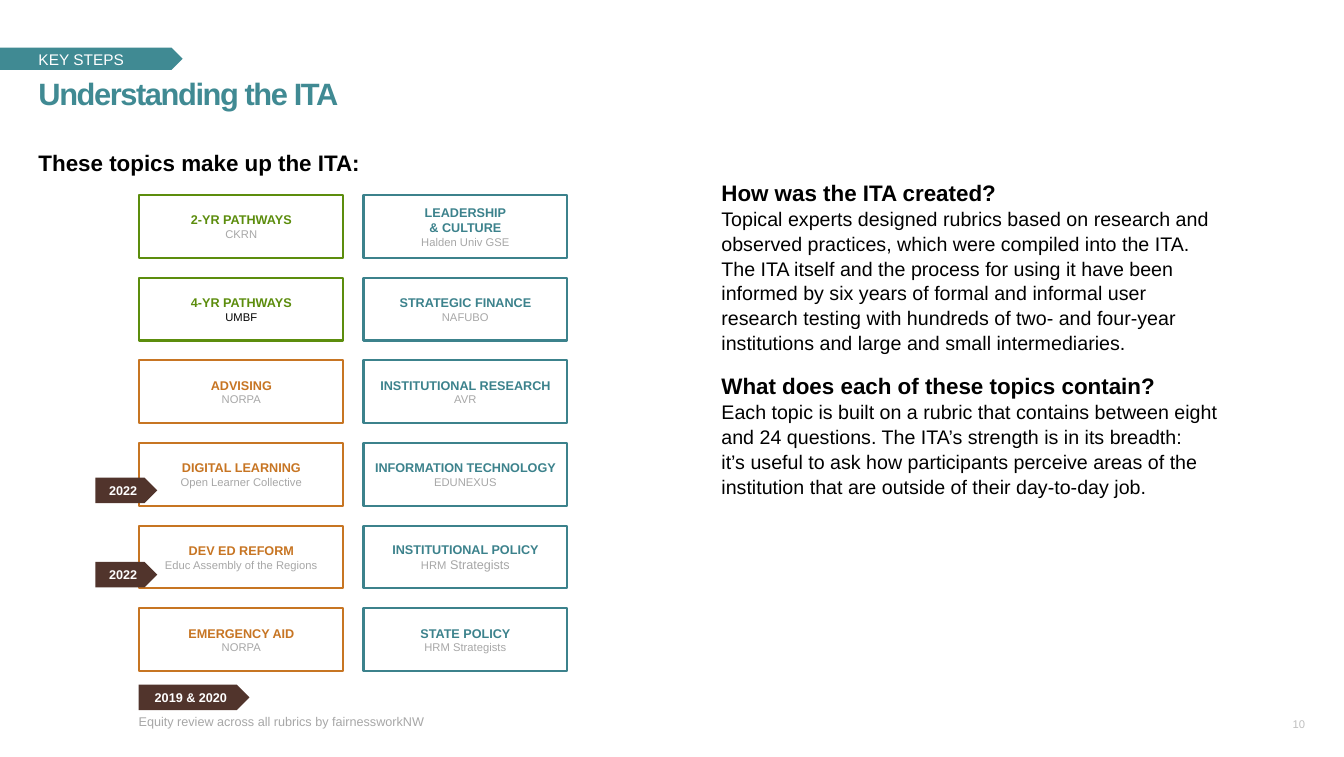
from dataclasses import dataclass

from pptx import Presentation
from pptx.dml.color import RGBColor
from pptx.enum.shapes import MSO_SHAPE
from pptx.enum.text import MSO_ANCHOR, PP_ALIGN
from pptx.util import Cm, Pt

RECTANGLE, PENTAGON = MSO_SHAPE.RECTANGLE, MSO_SHAPE.PENTAGON
LEFT, CENTER, RIGHT = PP_ALIGN.LEFT, PP_ALIGN.CENTER, PP_ALIGN.RIGHT
TOP, MIDDLE, BOTTOM = MSO_ANCHOR.TOP, MSO_ANCHOR.MIDDLE, MSO_ANCHOR.BOTTOM


@dataclass(frozen=True)
class Theme:
    font: str = "Arial"
    teal: str = "408A93"
    operations: str = "3C828C"
    pathways: str = "5C8D0D"
    support: str = "C77523"
    brown: str = "51342C"
    black: str = "000000"
    white: str = "FFFFFF"
    gray: str = "A7A7A7"
    pale: str = "BFBFBF"
    title: int = 22
    heading: int = 16
    body: int = 14
    kicker: int = 11
    label: int = 9
    small: int = 8


@dataclass
class Line:
    text: str
    size: int
    color: str
    bold: bool = False
    after: int = 0


class SlideBuilder:
    def __init__(self, slide, theme):
        self.shapes = slide.shapes
        self.theme = theme

    def style(self, run, size, color, bold=False):
        run.font.name = self.theme.font
        run.font.size = Pt(size)
        run.font.bold = bold
        run.font.color.rgb = RGBColor.from_string(color)

    def set_lines(self, frame, lines, align, anchor, spacing=1.0, inset=True):
        frame.word_wrap = True
        frame.vertical_anchor = anchor
        if not inset:
            frame.margin_left = frame.margin_right = 0
            frame.margin_top = frame.margin_bottom = 0
        for index, line in enumerate(lines):
            paragraph = frame.add_paragraph() if index else frame.paragraphs[0]
            paragraph.text = line.text
            paragraph.alignment = align
            paragraph.line_spacing = spacing
            paragraph.space_after = Pt(line.after)
            for run in paragraph.runs:
                self.style(run, line.size, line.color, line.bold)

    def text(self, left, top, width, height, lines, align=LEFT, anchor=TOP, spacing=1.05):
        frame = self.shapes.add_textbox(Cm(left), Cm(top), Cm(width), Cm(height)).text_frame
        self.set_lines(frame, lines, align, anchor, spacing, inset=False)
        return frame

    def shape(self, kind, left, top, width, height, fill, outline=None):
        shape = self.shapes.add_shape(kind, Cm(left), Cm(top), Cm(width), Cm(height))
        shape.shadow.inherit = False
        shape.fill.solid()
        shape.fill.fore_color.rgb = RGBColor.from_string(fill)
        if outline:
            shape.line.color.rgb = RGBColor.from_string(outline)
            shape.line.width = Pt(1.5)
        else:
            shape.line.fill.background()
        return shape

    def topic(self, left, top, color, names, partner, partner_color):
        card = self.shape(RECTANGLE, left, top, 5.13, 1.58, self.theme.white, color)
        lines = [Line(name, self.theme.label, color, True) for name in names]
        lines.append(Line(partner, self.theme.small, partner_color))
        self.set_lines(card.text_frame, lines, CENTER, MIDDLE, inset=False)
        return card.text_frame

    def year_tag(self, left, top, width, years):
        tag = self.shape(PENTAGON, left, top, width, 0.64, self.theme.brown)
        line = Line(years, self.theme.label, self.theme.white, True)
        self.set_lines(tag.text_frame, [line], CENTER, MIDDLE)


def main():
    theme = Theme()
    presentation = Presentation()
    presentation.slide_width, presentation.slide_height = Cm(33.83), Cm(19.05)
    slide = presentation.slides.add_slide(presentation.slide_layouts[6])
    builder = SlideBuilder(slide, theme)

    # Header
    builder.shape(PENTAGON, 0, 1.2, 4.6, 0.56, theme.teal)
    builder.text(0.97, 1.17, 14.66, 0.56,
                 [Line("KEY STEPS", theme.kicker, theme.white)], anchor=BOTTOM)
    title = builder.text(0.97, 1.83, 31.88, 0.8,
                         [Line("Understanding the ITA", theme.title, theme.teal, True)])
    title.paragraphs[0].runs[0]._r.get_or_add_rPr().set("spc", "-100")

    # Topic grid
    builder.text(0.97, 3.73, 14.66, 0.6,
                 [Line("These topics make up the ITA:", theme.heading, theme.black, True)])
    topic_columns = [
        [
            (theme.pathways, ["2-YR PATHWAYS"], "CKRN", theme.gray),
            (theme.pathways, ["4-YR PATHWAYS"], "UMBF", theme.black),
            (theme.support, ["ADVISING"], "NORPA", theme.gray),
            (theme.support, ["DIGITAL LEARNING"], "Open Learner Collective", theme.gray),
            (theme.support, ["DEV ED REFORM"], "Educ Assembly of the Regions", theme.gray),
            (theme.support, ["EMERGENCY AID"], "NORPA", theme.gray),
        ],
        [
            (theme.operations, ["LEADERSHIP", "& CULTURE"], "Halden Univ GSE", theme.gray),
            (theme.operations, ["STRATEGIC FINANCE"], "NAFUBO", theme.gray),
            (theme.operations, ["INSTITUTIONAL RESEARCH"], "AVR", theme.gray),
            (theme.operations, ["INFORMATION TECHNOLOGY"], "EDUNEXUS", theme.gray),
            (theme.operations, ["INSTITUTIONAL POLICY"], "HRM", theme.gray),
            (theme.operations, ["STATE POLICY"], "HRM Strategists", theme.gray),
        ],
    ]
    topic_frames = {}
    for column, topics in enumerate(topic_columns):
        for row, topic in enumerate(topics):
            topic_frames[column, row] = builder.topic(
                3.51 + 5.64 * column, 4.91 + 2.08 * row, *topic)

    # Larger second word in the institutional policy partner
    partner_word = topic_frames[1, 4].paragraphs[-1].add_run()
    partner_word.text = " Strategists"
    builder.style(partner_word, theme.label, theme.gray)

    # Year tags and equity review
    for left, top, width, years in [
        (2.4, 12.02, 1.56, "2022"),
        (2.4, 14.14, 1.56, "2022"),
        (3.49, 17.23, 2.79, "2019 & 2020"),
    ]:
        builder.year_tag(left, top, width, years)
    builder.text(3.49, 17.96, 9, 0.38,
                 [Line("Equity review across all rubrics by fairnessworkNW", theme.label, theme.gray)],
                 anchor=MIDDLE, spacing=1.0)

    # Questions and answers
    builder.text(18.16, 4.47, 12.67, 12.85, [
        Line("How was the ITA created?", theme.heading, theme.black, True),
        Line("Topical experts designed rubrics based on research and observed practices, "
             "which were compiled into the ITA.", theme.body, theme.black),
        Line("The ITA itself and the process for using it have been informed by six years of "
             "formal and informal user research testing with hundreds of two- and four-year "
             "institutions and large and small intermediaries.", theme.body, theme.black, after=12),
        Line("What does each of these topics contain?", theme.heading, theme.black, True),
        Line("Each topic is built on a rubric that contains between eight and 24 questions. "
             "The ITA’s strength is in its breadth:", theme.body, theme.black),
        Line("it’s useful to ask how participants perceive areas of the institution that are "
             "outside of their day-to-day job.", theme.body, theme.black, after=12),
    ])

    # Slide number
    builder.text(32, 18.06, 0.85, 0.33, [Line("10", theme.small, theme.pale)],
                 RIGHT, MIDDLE, 1.0)

    presentation.save("out.pptx")


if __name__ == "__main__":
    main()
